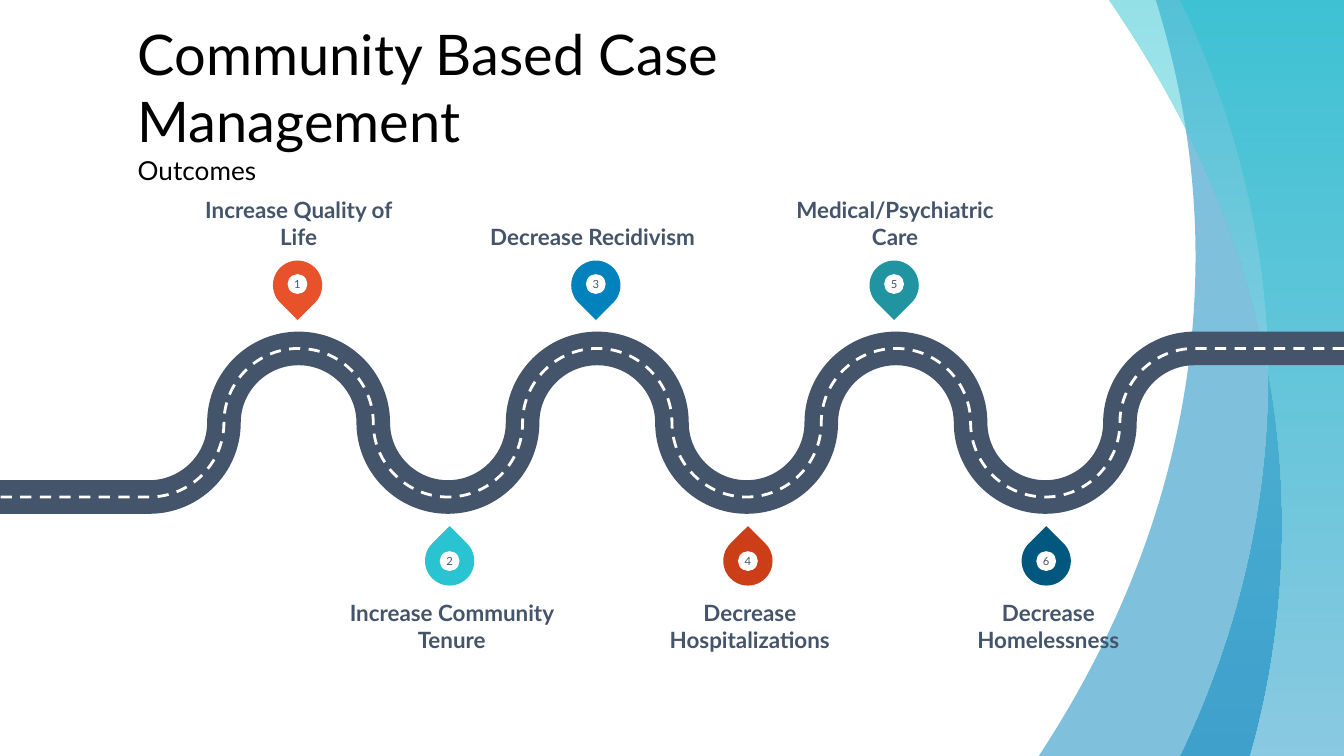
from lxml.etree import SubElement
from pptx import Presentation
from pptx.dml.color import RGBColor
from pptx.enum.dml import MSO_LINE
from pptx.enum.shapes import MSO_SHAPE
from pptx.enum.text import MSO_ANCHOR, PP_ALIGN
from pptx.oxml.ns import qn
from pptx.util import Pt

WIDTH, HEIGHT = 720, 405
BLUE, TEAL, PALE, SLATE, WHITE = "0182BC", "2AC3D1", "D4F3F6", "44546A", "FFFFFF"

# Road: quarter turns between a top, a middle and a bottom level
ROAD_TOP, ROAD_MIDDLE, ROAD_BOTTOM = 186.7, 226.5, 266.3
TURN_START, TURN_WIDTH, TURN_COUNT = 640, 40, 14
BEND = 0.55
PIN_PITCH = 159.8

# Top to bottom colours, then x and y of: top, two controls, crest, two controls, bottom
WAVES = [
    ((BLUE,), [(619.2, 0), (632.9, 43.9), (640.5, 90), (640.5, 137.5),
               (640.5, 233.3), (609.8, 324), (556.5, HEIGHT)]),
    ((TEAL, BLUE), [(632.2, 0), (663.1, 64.1), (679.7, 132.5), (679.7, 203),
                    (679.7, 274.3), (662.4, 342.7), (632.6, HEIGHT)]),
    ((TEAL, PALE), [(594, 0), (653.8, 85.7), (686.9, 180.7), (686.9, 281.5),
                    (686.9, 323.3), (681.1, 365.8), (669.8, HEIGHT)]),
]

# Label, label centre, pin colour; odd stops stand above the road, even ones below
STOPS = [
    ("Increase Quality of Life", 160, "E7522A"),
    ("Increase Community Tenure", 242, TEAL),
    ("Decrease Recidivism", 317.5, BLUE),
    ("Decrease Hospitalizations", 401.7, "CB3E17"),
    ("Medical/Psychiatric Care", 479.5, "2094A0"),
    ("Decrease Homelessness", 561.6, "01577D"),
]


def colour(value):
    return RGBColor.from_string(value)


def road_segments():
    """Return the straight and curved segments from the right edge to the left."""
    levels = (ROAD_TOP, ROAD_MIDDLE, ROAD_BOTTOM, ROAD_MIDDLE)
    segments = [[(TURN_START, ROAD_TOP)]]
    for index in range(TURN_COUNT):
        x, y = TURN_START - index * TURN_WIDTH, levels[index % 4]
        end_x, end_y = x - TURN_WIDTH, levels[(index + 1) % 4]
        reach_x, reach_y = BEND * (end_x - x), BEND * (end_y - y)
        if index % 2:
            controls = [(x, y + reach_y), (end_x - reach_x, end_y)]
        else:
            controls = [(x + reach_x, y), (end_x, end_y - reach_y)]
        segments.append(controls + [(end_x, end_y)])
    return segments + [[(0, ROAD_BOTTOM)]]


class RoadmapSlide:
    font = "Lato"

    def __init__(self, deck):
        self.slide = deck.slides.add_slide(deck.slide_layouts[6])

    def outline(self, start, segments, close):
        """Draw segments of one point (a line) or three points (a cubic curve)."""
        builder = self.slide.shapes.build_freeform(Pt(start[0]), Pt(start[1]))
        ends = [segment[-1] for segment in segments]
        builder.add_line_segments([(Pt(x), Pt(y)) for x, y in ends], close=close)
        shape = builder.convert_to_shape()
        shape.shadow.inherit = False
        nodes = list(shape.element.iter(qn("a:lnTo")))
        for node, segment in zip(nodes, segments):
            if len(segment) == 3:
                node.clear()
                node.tag = qn("a:cubicBezTo")
                for x, y in segment:
                    SubElement(node, qn("a:pt"), x=str(Pt(x) - shape.left),
                               y=str(Pt(y) - shape.top))
        return shape

    def wave(self, colours, nodes):
        """Draw a half-transparent band from a curved edge to the right side."""
        segments = [nodes[1:4], nodes[4:], [(WIDTH, HEIGHT)], [(WIDTH, 0)]]
        shape = self.outline(nodes[0], segments, close=True)
        shape.line.fill.background()
        if len(colours) == 1:
            shape.fill.solid()
            shape.fill.fore_color.rgb = colour(colours[0])
        else:
            shape.fill.gradient()
            shape.fill.gradient_angle = 270
            for stop, value in zip(shape.fill.gradient_stops, colours):
                stop.color.rgb = colour(value)
        for node in list(shape.element.spPr.iter(qn("a:srgbClr"))):
            SubElement(node, qn("a:alpha"), val="50000")

    def road(self, value, width, dash=None):
        shape = self.outline((WIDTH, ROAD_TOP), road_segments(), close=False)
        shape.fill.background()
        shape.line.color.rgb = colour(value)
        shape.line.width = Pt(width)
        if dash:
            shape.line.dash_style = dash

    def frame(self, shape, anchor):
        """Clear the margins and return the first paragraph."""
        frame = shape.text_frame
        frame.margin_left = frame.margin_right = 0
        frame.margin_top = frame.margin_bottom = 0
        frame.word_wrap = True
        frame.vertical_anchor = anchor
        return frame.paragraphs[0]

    def style(self, para, size, value, bold=False):
        para.alignment = PP_ALIGN.CENTER
        para.font.name = self.font
        para.font.size = Pt(size)
        para.font.bold = bold
        para.font.color.rgb = colour(value)

    def title(self, heading, subtitle):
        box = self.slide.shapes.add_textbox(Pt(73.75), Pt(41), Pt(475), Pt(58.4))
        para = self.frame(box, MSO_ANCHOR.BOTTOM)
        para.font.name = self.font
        para.font.color.rgb = colour("000000")
        span = para.add_run()
        span.text, span.font.size = heading, Pt(30)
        para.add_line_break()
        span = para.add_run()
        span.text, span.font.size = subtitle, Pt(14)

    def disc(self, group, kind, center, middle, size, value):
        shape = group.shapes.add_shape(
            kind, Pt(center - size / 2), Pt(middle - size / 2), Pt(size), Pt(size))
        shape.shadow.inherit = False
        shape.fill.solid()
        shape.fill.fore_color.rgb = colour(value)
        shape.line.fill.background()
        return shape

    def pin(self, number, center, middle, badge_middle, rotation, value):
        group = self.slide.shapes.add_group_shape()
        drop = self.disc(group, MSO_SHAPE.TEAR, center, middle, 26.4, value)
        drop.rotation = rotation
        badge = self.disc(group, MSO_SHAPE.OVAL, center, badge_middle, 10.6, WHITE)
        para = self.frame(badge, MSO_ANCHOR.MIDDLE)
        para.text = str(number)
        self.style(para, 6, SLATE)

    def label(self, text, center, top, anchor):
        width = 113.8
        box = self.slide.shapes.add_textbox(
            Pt(center - width / 2), Pt(top), Pt(width), Pt(41.8))
        para = self.frame(box, anchor)
        para.text = text
        self.style(para, 12, SLATE, bold=True)


def main():
    deck = Presentation()
    deck.slide_width, deck.slide_height = Pt(WIDTH), Pt(HEIGHT)
    page = RoadmapSlide(deck)
    for colours, nodes in WAVES:
        page.wave(colours, nodes)
    page.title("Community Based Case Management", "Outcomes")
    page.road(SLATE, 18)
    page.road(WHITE, 1.5, MSO_LINE.DASH)

    for index, (text, center, value) in enumerate(STOPS):
        offset = index // 2 * PIN_PITCH
        if index % 2:
            page.pin(index + 1, 240.9 + offset, 300.5, 300.6, 315, value)
            page.label(text, center, 321.1, MSO_ANCHOR.TOP)
        else:
            page.pin(index + 1, 159.4 + offset, 152.8, 152.2, 135, value)
            page.label(text, center, 92.2, MSO_ANCHOR.BOTTOM)
    deck.save("out.pptx")


if __name__ == "__main__":
    main()
